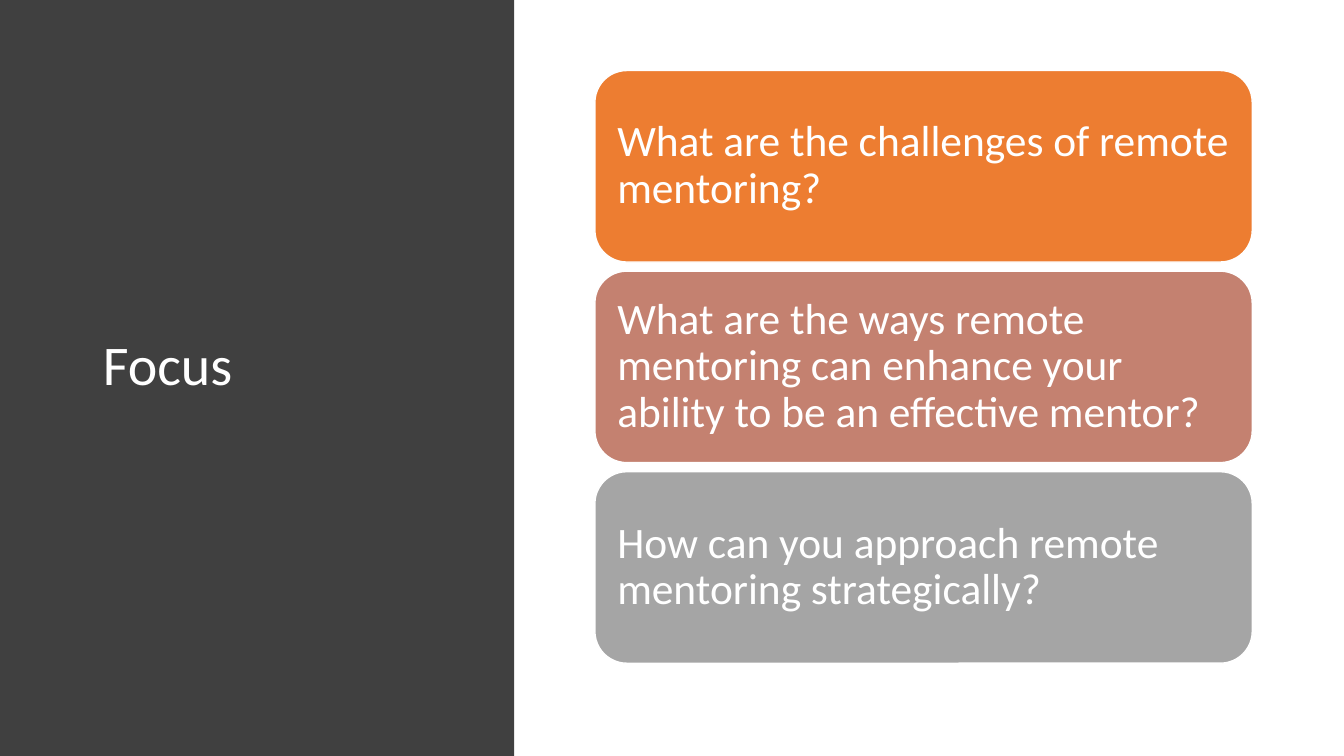
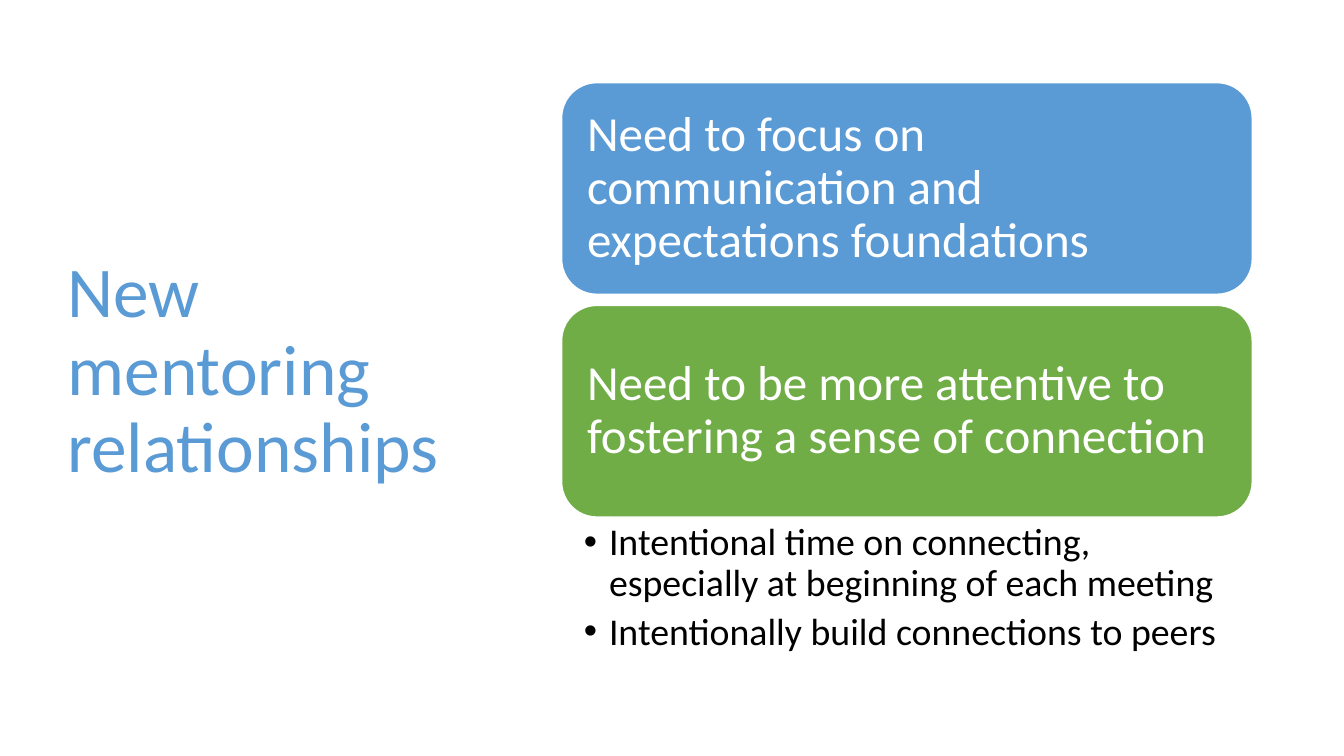
from lxml.etree import SubElement
from pptx import Presentation
from pptx.dml.color import RGBColor
from pptx.enum.shapes import MSO_SHAPE as SHAPE
from pptx.enum.text import MSO_ANCHOR as ANCHOR, MSO_AUTO_SIZE as FIT, PP_ALIGN as ALIGN
from pptx.oxml.ns import qn
from pptx.util import Inches, Pt

FONT = "Calibri"
WHITE, BLACK, DARK = "FFFFFF", "000000", "404040"
ORANGE, CLAY, GRAY = "ED7D31", "C48170", "A5A5A5"
BLUE, GREEN = "5B9BD5", "70AD47"


def rgb(value):
    return RGBColor.from_string(value)


def box(left, top, width, height):
    return Inches(left), Inches(top), Inches(width), Inches(height)


def write(p, text, size, color, after=0):
    p.alignment = ALIGN.LEFT
    p.line_spacing = 0.9
    p.space_before = Pt(0)
    p.space_after = Pt(after)
    r = p.add_run()
    r.text = text
    r.font.name = FONT
    r.font.size = Pt(size)
    r.font.color.rgb = rgb(color)


def frame(sp, left, top, right, bottom, anchor):
    tf = sp.text_frame
    tf.word_wrap = True
    tf.auto_size = FIT.NONE
    tf.vertical_anchor = anchor
    tf.margin_left, tf.margin_top = Inches(left), Inches(top)
    tf.margin_right, tf.margin_bottom = Inches(right), Inches(bottom)
    return tf


class Deck:
    def __init__(self):
        self.prs = Presentation()
        self.prs.slide_width = Inches(13.33)
        self.prs.slide_height = Inches(7.5)
        self.s = None

    def slide(self):
        self.s = self.prs.slides.add_slide(self.prs.slide_layouts[5])

    def title(self, text, place, size, color):
        sp = self.s.shapes.title
        sp.left, sp.top, sp.width, sp.height = box(*place)
        tf = frame(sp, 0.1, 0.05, 0.1, 0.05, ANCHOR.MIDDLE)
        write(tf.paragraphs[0], text, size, color)

    def shape(self, kind, place, fill, line=None):
        sp = self.s.shapes.add_shape(kind, *box(*place))
        sp.shadow.inherit = False
        sp.fill.solid()
        sp.fill.fore_color.rgb = rgb(fill)
        if line:
            sp.line.color.rgb = rgb(line)
            sp.line.width = Pt(1)
        else:
            sp.line.fill.background()
        return sp

    def panel(self, width, fill):
        sp = self.shape(SHAPE.RECTANGLE, (0, 0, width, 7.5), fill)
        self.s.shapes.title.element.addprevious(sp.element)

    def cards(self, items, place, pitch, size, inset):
        left, top, width, height = place
        for i, (text, fill) in enumerate(items):
            spot = (left, top + i * pitch, width, height)
            sp = self.shape(SHAPE.ROUNDED_RECTANGLE, spot, fill, WHITE)
            tf = frame(sp, inset, inset, inset, inset, ANCHOR.MIDDLE)
            write(tf.paragraphs[0], text, size, WHITE)

    def bullets(self, items, place, size):
        sp = self.s.shapes.add_textbox(*box(*place))
        tf = frame(sp, 0.22, 0.05, 0.27, 0.05, ANCHOR.TOP)
        for i, text in enumerate(items):
            p = tf.add_paragraph() if i else tf.paragraphs[0]
            write(p, text, size, BLACK, after=size * 0.2)
            pPr = p._p.get_or_add_pPr()
            pPr.set("marL", str(Inches(0.25)))
            pPr.set("indent", str(-Inches(0.25)))
            SubElement(pPr, qn("a:buFont"), typeface="Arial")
            SubElement(pPr, qn("a:buChar"), char="•")


def main():
    deck = Deck()

    deck.slide()
    deck.panel(5.1, DARK)
    deck.title("Focus", (0.92, 0.68, 3.67, 5.92), 40, WHITE)
    deck.cards([
        ("What are the challenges of remote mentoring?", ORANGE),
        ("What are the ways remote mentoring can enhance your "
         "ability to be an effective mentor?", CLAY),
        ("How can you approach remote mentoring strategically?", GRAY),
    ], (5.9, 0.7, 6.52, 1.9), 1.99, 31, 0.13)

    deck.slide()
    deck.title("New mentoring relationships", (0.57, 0.68, 4.16, 6.02), 51, BLUE)
    deck.cards([
        ("Need to focus on communication and expectations foundations", BLUE),
        ("Need to be more attentive to fostering a sense of connection", GREEN),
    ], (5.57, 0.82, 6.85, 2.1), 2.21, 35, 0.15)
    deck.bullets([
        "Intentional time on connecting, especially at beginning of each meeting",
        "Intentionally build connections to peers",
    ], (5.57, 5.14, 6.85, 1.43), 27)

    deck.prs.save("out.pptx")


if __name__ == "__main__":
    main()
